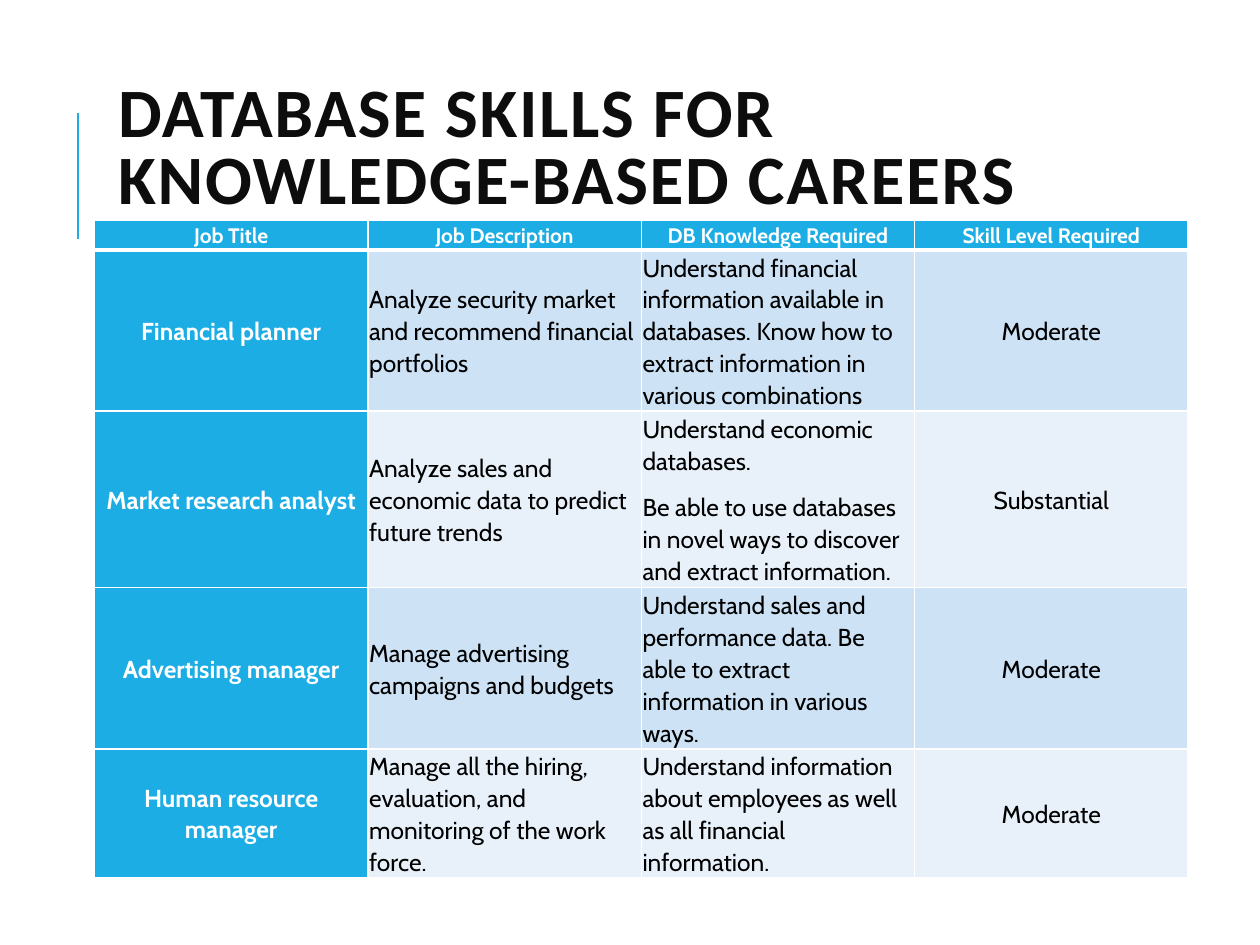
from dataclasses import dataclass

from lxml.etree import SubElement
from pptx import Presentation
from pptx.dml.color import RGBColor
from pptx.enum.shapes import MSO_CONNECTOR as Connector
from pptx.enum.text import MSO_ANCHOR as Anchor, PP_ALIGN as Align
from pptx.oxml import parse_xml
from pptx.oxml.ns import nsdecls, qn
from pptx.util import Inches, Pt

TITLE = "DATABASE SKILLS FOR KNOWLEDGE-BASED CAREERS"
HEADERS = ["Job Title", "Job Description", "DB Knowledge Required", "Skill Level Required"]
CAREERS = [
    (
        "Financial planner",
        "Analyze security market and recommend financial portfolios",
        "Understand financial information available in databases. "
        "Know how to extract information in various combinations",
        "Moderate",
    ),
    (
        "Market research analyst",
        "Analyze sales and economic data to predict future trends",
        "Understand economic databases.\n"
        "Be able to use databases in novel ways to discover and extract information.",
        "Substantial",
    ),
    (
        "Advertising manager",
        "Manage advertising campaigns and budgets",
        "Understand sales and performance data. "
        "Be able to extract information in various ways.",
        "Moderate",
    ),
    (
        "Human resource manager",
        "Manage all the hiring, evaluation, and monitoring of the work force.",
        "Understand information about employees as well as all financial information.",
        "Moderate",
    ),
]
ROW_HEIGHTS = [0.23, 1.28, 1.4, 1.28, 1.02]
COLUMN_WIDTH = 2.17
CENTERED_COLUMNS = (0, 3)


@dataclass(frozen=True)
class Theme:
    accent: str = "1CADE4"
    bands: tuple = ("CDE3F5", "E8F1FA")
    title: str = "0D0D0D"
    body: str = "000000"
    white: str = "FFFFFF"
    title_font: str = "Calibri"
    table_font: str = "Cabin"
    title_size: float = 39.6
    header_size: int = 12
    body_size: int = 14


THEME = Theme()


def add_run(paragraph, text, font, size, color, bold):
    run = paragraph.add_run()
    run.text = text
    run.font.name = font
    run.font.size = Pt(size)
    run.font.bold = bold
    run.font.color.rgb = RGBColor.from_string(color)
    return run


def set_borders(cell, bottom):
    properties = cell._tc.get_or_add_tcPr()
    widths = {"lnL": 1, "lnR": 1, "lnT": 1, "lnB": bottom}
    for index, (side, width) in enumerate(widths.items()):
        border = parse_xml(
            f'<a:{side} {nsdecls("a")} w="{Pt(width)}"><a:solidFill>'
            f'<a:srgbClr val="{THEME.white}"/></a:solidFill></a:{side}>'
        )
        properties.insert(index, border)


def add_title(slide):
    box = slide.shapes.add_textbox(Inches(0.84), Inches(0.64), Inches(7.97), Inches(1.64))
    frame = box.text_frame
    frame.word_wrap = True
    frame.vertical_anchor = Anchor.TOP
    frame.margin_top = Inches(0.03)
    paragraph = frame.paragraphs[0]
    paragraph.line_spacing = 0.8
    run = add_run(paragraph, TITLE, THEME.title_font, THEME.title_size, THEME.title, True)
    run._r.get_or_add_rPr().set("spc", "100")


def add_accent_line(slide):
    line = slide.shapes.add_connector(
        Connector.STRAIGHT, Inches(0.62), Inches(1.9), Inches(0.62), Inches(0.9)
    )
    line.line.color.rgb = RGBColor.from_string(THEME.accent)
    line.line.width = Pt(1.5)
    SubElement(line._element.spPr, qn("a:effectLst"))


def fill_cell(cell, text, row, column):
    header = row == 0
    strong = header or column == 0
    fill = THEME.accent if strong else THEME.bands[(row - 1) % 2]
    cell.fill.solid()
    cell.fill.fore_color.rgb = RGBColor.from_string(fill)
    set_borders(cell, 3 if header else 1)
    cell.vertical_anchor = Anchor.MIDDLE
    cell.margin_left = cell.margin_right = Inches(0.01)
    cell.margin_top = cell.margin_bottom = Inches(0.01)
    frame = cell.text_frame
    for index, line in enumerate(text.split("\n")):
        paragraph = frame.add_paragraph() if index else frame.paragraphs[0]
        centered = header or column in CENTERED_COLUMNS
        paragraph.alignment = Align.CENTER if centered else Align.LEFT
        paragraph.line_spacing = 1.07
        paragraph.space_after = Pt(0 if header else 8)
        size = THEME.header_size if header else THEME.body_size
        color = THEME.white if strong else THEME.body
        add_run(paragraph, line, THEME.table_font, size, color, strong)


def add_career_table(slide):
    rows = [HEADERS, *CAREERS]
    table = slide.shapes.add_table(
        len(rows), len(HEADERS), Inches(0.75), Inches(1.75),
        Inches(COLUMN_WIDTH * len(HEADERS)), Inches(sum(ROW_HEIGHTS)),
    ).table
    for column in table.columns:
        column.width = Inches(COLUMN_WIDTH)
    for row, (texts, height) in enumerate(zip(rows, ROW_HEIGHTS)):
        table.rows[row].height = Inches(height)
        for column, text in enumerate(texts):
            fill_cell(table.cell(row, column), text, row, column)


def main():
    presentation = Presentation()
    presentation.slide_width = Inches(10)
    presentation.slide_height = Inches(7.5)
    slide = presentation.slides.add_slide(presentation.slide_layouts[6])
    add_accent_line(slide)
    add_title(slide)
    add_career_table(slide)
    presentation.save("out.pptx")


if __name__ == "__main__":
    main()
